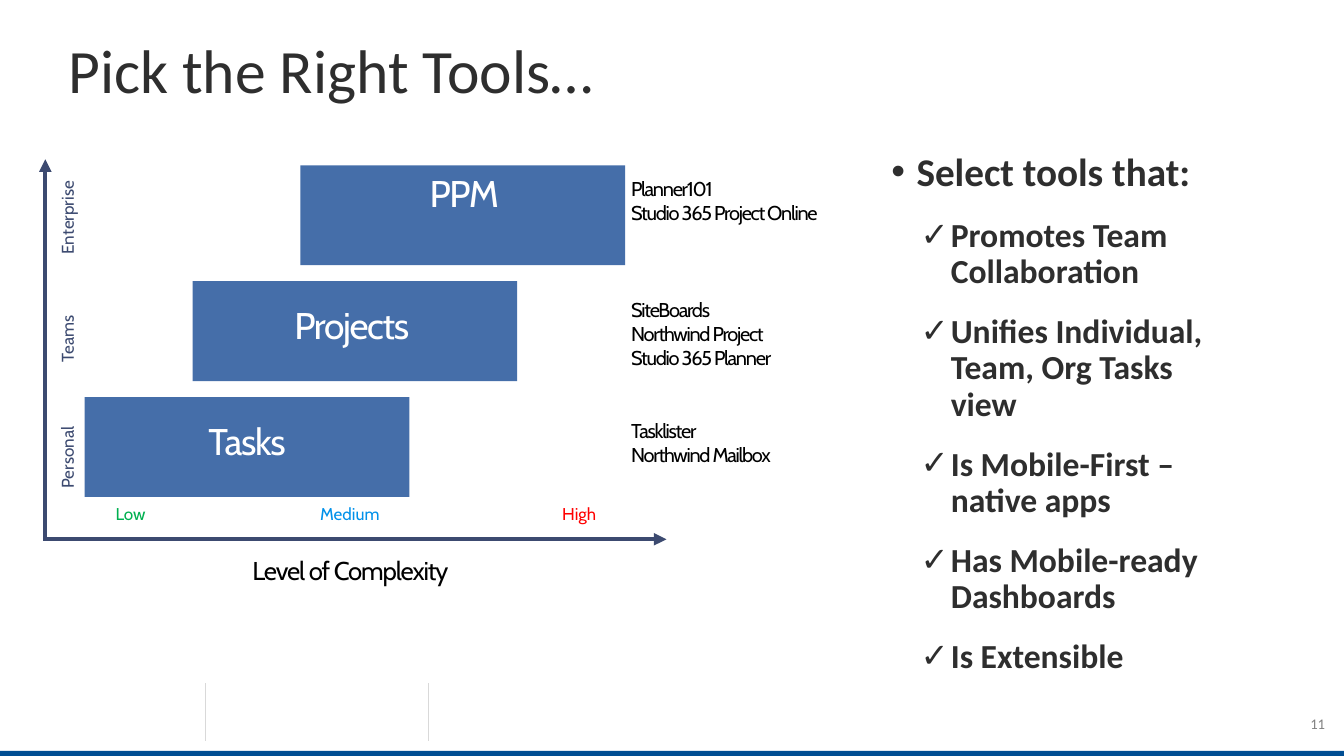
from dataclasses import dataclass

import pptx
import pptx.dml.color
import pptx.enum.shapes
import pptx.enum.text
import pptx.oxml.xmlchemy
import pptx.util
from pptx.util import Inches

Align = pptx.enum.text.PP_ALIGN
Anchor = pptx.enum.text.MSO_ANCHOR
AutoSize = pptx.enum.text.MSO_AUTO_SIZE


@dataclass(frozen=True)
class TextStyle:
    size: float
    color: str
    face: str = "Cabin"
    bold: bool = False
    line: float = 1.0
    spacing: float = 0
    align: Align = Align.CENTER


class Theme:
    axis, block, footer, divider = "3C4A70", "456EA9", "004E93", "D9D9D9"
    title = TextStyle(44, "2E2E2E", "Calibri", line=0.9, align=Align.LEFT)
    lead = TextStyle(28, "2E2E2E", "Calibri", True, 0.9, align=Align.LEFT)
    point = TextStyle(24, "2E2E2E", "Calibri", True, 0.9, align=Align.LEFT)
    number = TextStyle(10.5, "808080", "Calibri", align=Align.RIGHT)
    tools = TextStyle(14.3, "000000", spacing=-0.9, align=Align.LEFT)
    caption = TextStyle(18.4, "000000", line=0.8, spacing=-0.8)
    block_label = TextStyle(26.5, "FFFFFF", line=0.85, spacing=-1)

    @staticmethod
    def tick(color):
        return TextStyle(12.2, color, line=0.75)


def rgb(color):
    return pptx.dml.color.RGBColor.from_string(color)


def add_xml(parent, tag, **attributes):
    child = pptx.oxml.xmlchemy.OxmlElement(tag)
    for key, value in attributes.items():
        child.set(key, value)
    parent.append(child)


class SlideBuilder:
    def __init__(self, presentation, theme):
        self.theme = theme
        self.slide = presentation.slides.add_slide(presentation.slide_layouts[1])
        self.shapes = self.slide.shapes

    def style(self, paragraph, style):
        paragraph.alignment = style.align
        paragraph.line_spacing = style.line
        font = paragraph.font
        font.name, font.size = style.face, pptx.util.Pt(style.size)
        font.bold, font.color.rgb = style.bold, rgb(style.color)
        if style.spacing:
            properties = paragraph._p.get_or_add_pPr().get_or_add_defRPr()
            properties.set("spc", str(round(style.spacing * 100)))

    def place(self, shape, box):
        shape.left, shape.top, shape.width, shape.height = map(Inches, box)

    def title(self, text, box):
        heading = self.shapes.title
        self.place(heading, box)
        frame = heading.text_frame
        frame.text = text
        frame.auto_size, frame.vertical_anchor = AutoSize.NONE, Anchor.MIDDLE
        self.style(frame.paragraphs[0], self.theme.title)

    def checklist(self, lead, points, box):
        body = self.slide.placeholders[1]
        self.place(body, box)
        frame = body.text_frame
        frame.text = "\n".join([lead, *points])
        frame.auto_size, frame.vertical_anchor = AutoSize.NONE, Anchor.TOP
        for index, paragraph in enumerate(frame.paragraphs):
            is_point = index > 0
            paragraph.level = int(is_point)
            paragraph.space_before = pptx.util.Pt(5 if is_point else 0)
            paragraph.space_after = pptx.util.Pt(12)
            margin, indent = (0.59, -0.3) if is_point else (0.25, -0.25)
            properties = paragraph._p.get_or_add_pPr()
            properties.set("marL", str(Inches(margin)))
            properties.set("indent", str(Inches(indent)))
            add_xml(properties, "a:buChar", char="✓" if is_point else "•")
            self.style(paragraph, self.theme.point if is_point else self.theme.lead)

    def text(self, text, box, style, rotation=0, wrap=True, inset=0.0, anchor=Anchor.TOP):
        label = self.shapes.add_textbox(*map(Inches, box))
        label.rotation = rotation
        frame = label.text_frame
        frame.word_wrap, frame.vertical_anchor = wrap, anchor
        frame.margin_left = frame.margin_right = Inches(inset)
        frame.margin_top = frame.margin_bottom = Inches(inset / 2)
        frame.text = text
        for paragraph in frame.paragraphs:
            self.style(paragraph, style)

    def rectangle(self, box, color):
        bar = self.shapes.add_shape(
            pptx.enum.shapes.MSO_SHAPE.RECTANGLE, *map(Inches, box))
        bar.shadow.inherit = False
        bar.fill.solid()
        bar.fill.fore_color.rgb = rgb(color)
        bar.line.fill.background()

    def line(self, start, end, color, width, arrow=False):
        rule = self.shapes.add_connector(
            pptx.enum.shapes.MSO_CONNECTOR.STRAIGHT, *map(Inches, (*start, *end)))
        rule.line.color.rgb = rgb(color)
        rule.line.width = pptx.util.Pt(width)
        if arrow:
            add_xml(rule.line._get_or_add_ln(), "a:tailEnd", type="triangle")
        add_xml(rule._element.spPr, "a:effectLst")


def main():
    presentation = pptx.Presentation()
    presentation.slide_width, presentation.slide_height = Inches(13.33), Inches(7.5)
    theme = Theme()
    page = SlideBuilder(presentation, theme)

    # Footer decoration and slide number
    for divider_x in (2.04, 4.25):
        page.line((divider_x, 6.78), (divider_x, 7.35), theme.divider, 0.5)
    page.rectangle((0, 7.45, 13.33, 0.05), theme.footer)
    page.text("11", (12.79, 6.98, 0.45, 0.4), theme.number,
              inset=0.1, anchor=Anchor.MIDDLE)

    # Title and checklist
    page.title("Pick the Right Tools…", (0.58, 0, 11.84, 1.45))
    page.checklist("Select tools that:", [
        "Promotes Team Collaboration",
        "Unifies Individual, Team, Org Tasks view",
        "Is Mobile-First – native apps",
        "Has Mobile-ready Dashboards",
        "Is Extensible",
    ], (8.74, 1.46, 3.68, 4.95))

    # Example tools beside each step
    tool_groups = (
        "Planner101\nStudio 365 Project Online",
        "SiteBoards\nNorthwind Project\nStudio 365 Planner",
        "Tasklister\nNorthwind Mailbox",
    )
    line_height = 0.24
    for row, tools in enumerate(tool_groups):
        height = line_height * len(tools.split("\n"))
        page.text(tools, (6.26, 1.75 + 5 * line_height * row, 1.98, height), theme.tools)

    # Axes, scales and caption
    page.line((0.45, 5.35), (0.45, 1.58), theme.axis, 3, arrow=True)
    page.line((0.43, 5.35), (6.61, 5.35), theme.axis, 3, arrow=True)
    for scope, center_y, width in (
            ("Personal", 4.54, 0.65), ("Teams", 3.36, 0.48), ("Enterprise", 2.16, 0.77)):
        page.text(scope, (0.69 - width / 2, center_y - 0.08, width, 0.16),
                  theme.tick(theme.axis), rotation=270, wrap=False)
    for level, left, width, color in (
            ("Low", 1.14, 0.31, "00B050"), ("Medium", 3.15, 0.64, "0091EA"),
            ("High", 5.56, 0.37, "FF0000")):
        page.text(level, (left, 5.04, width, 0.16), theme.tick(color), wrap=False)
    page.text("Level of Complexity", (1.93, 5.56, 3.09, 0.25), theme.caption)

    # Staircase of work types
    for step, (work, label_box) in enumerate((
            ("PPM", (3.25, 1.76, 2.71, 0.38)),
            ("Projects", (2.41, 3.07, 2.16, 0.39)),
            ("Tasks", (1.44, 4.22, 2.02, 0.39)))):
        page.rectangle((2.98 - 1.07 * step, 1.64 + 1.15 * step, 3.22, 0.99), theme.block)
        page.text(work, label_box, theme.block_label)

    presentation.save("out.pptx")


if __name__ == "__main__":
    main()
